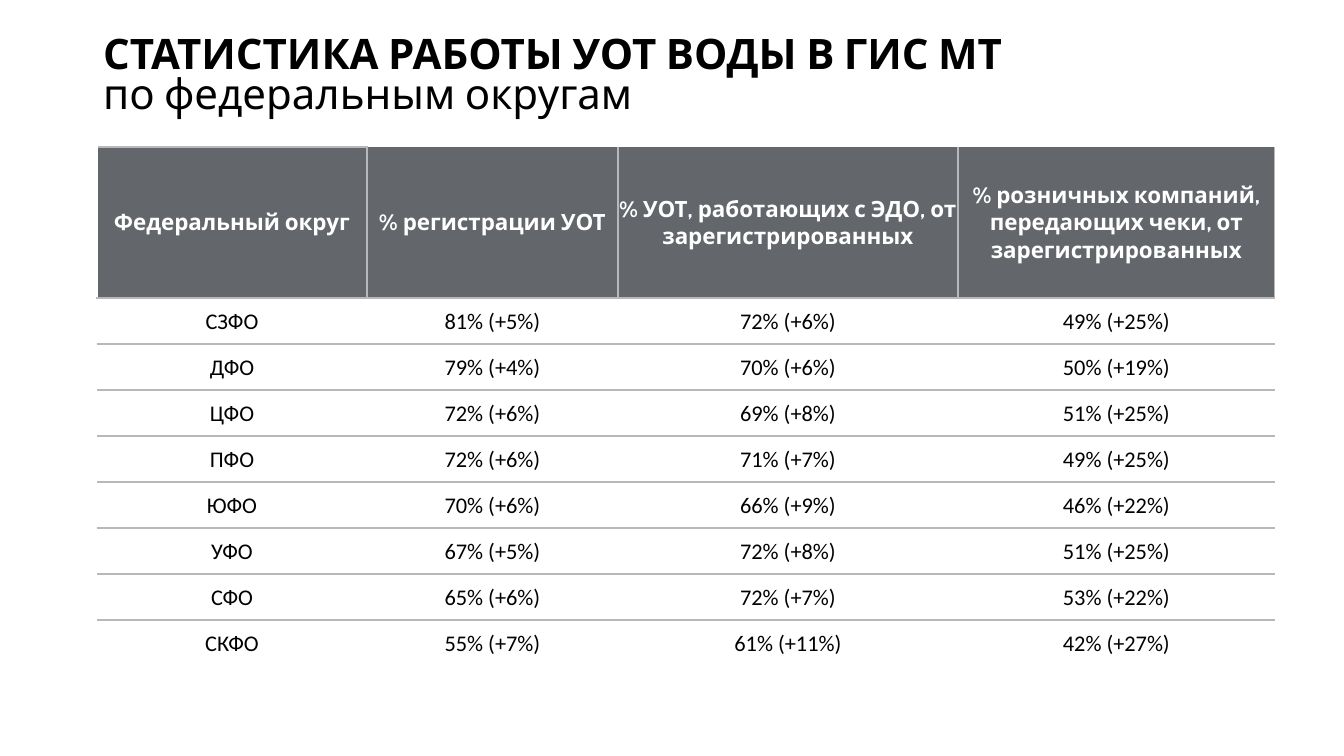
from lxml.etree import SubElement
from pptx import Presentation
from pptx.dml.color import RGBColor
from pptx.enum.text import MSO_ANCHOR as ANCHOR, MSO_AUTO_SIZE as AUTO, PP_ALIGN as ALIGN
from pptx.oxml.ns import qn
from pptx.util import Pt

PX = 914400 / 100.8
BLACK, WHITE, GREY, RULE = "000000", "FFFFFF", "63666A", "B6B8B9"

TITLE = [("СТАТИСТИКА РАБОТЫ УОТ ВОДЫ В ГИС МТ", True), ("по федеральным округам", False)]
HEADER = [
    "Федеральный округ",
    "% регистрации УОТ",
    "% УОТ, работающих с ЭДО, от зарегистрированных",
    "% розничных компаний, передающих чеки, от зарегистрированных",
]
DISTRICTS = [
    ("СЗФО", "81% (+5%)", "72% (+6%)", "49% (+25%)"),
    ("ДФО", "79% (+4%)", "70% (+6%)", "50% (+19%)"),
    ("ЦФО", "72% (+6%)", "69% (+8%)", "51% (+25%)"),
    ("ПФО", "72% (+6%)", "71% (+7%)", "49% (+25%)"),
    ("ЮФО", "70% (+6%)", "66% (+9%)", "46% (+22%)"),
    ("УФО", "67% (+5%)", "72% (+8%)", "51% (+25%)"),
    ("СФО", "65% (+6%)", "72% (+7%)", "53% (+22%)"),
    ("СКФО", "55% (+7%)", "61% (+11%)", "42% (+27%)"),
]
COLS = [270, 251, 340, 317]
ROWS = [151] + [46] * len(DISTRICTS)


def px(n):
    return round(n * PX)


def rgb(color):
    return RGBColor.from_string(color)


class Deck:
    """Holds the text style and the current slide."""
    head_font, body_font = "Cabin", "Calibri"
    title_size, cell_size = 30, 16

    def __init__(self, prs):
        self.slide = prs.slides.add_slide(prs.slide_layouts[5])

    def run(self, p, text, font, size, color, bold):
        r = p.add_run()
        r.text = text
        r.font.name, r.font.size, r.font.bold = font, Pt(size), bold
        r.font.color.rgb = rgb(color)

    def title(self, x, y, w, h, lines):
        sp = self.slide.shapes.title
        sp.left, sp.top, sp.width, sp.height = map(px, (x, y, w, h))
        tf = sp.text_frame
        tf.word_wrap, tf.auto_size = True, AUTO.SHAPE_TO_FIT_TEXT
        tf.vertical_anchor = ANCHOR.TOP
        for i, (text, bold) in enumerate(lines):
            p = tf.add_paragraph() if i else tf.paragraphs[0]
            p.alignment, p.line_spacing = ALIGN.LEFT, 0.8
            p.space_before = p.space_after = Pt(0)
            self.run(p, text, self.head_font, self.title_size, BLACK, bold)

    def borders(self, cell, **colors):
        """Draw the sides named L, R, T, B and clear the others."""
        tc_pr = cell._tc.get_or_add_tcPr()
        for side in "LRTB":
            ln = SubElement(tc_pr, qn(f"a:ln{side}"), w=str(Pt(1)))
            if side in colors:
                fill = SubElement(ln, qn("a:solidFill"))
                SubElement(fill, qn("a:srgbClr"), val=colors[side])
            else:
                SubElement(ln, qn("a:noFill"))

    def fill(self, cell, color, opacity=100):
        cell.fill.solid()
        cell.fill.fore_color.rgb = rgb(color)
        if opacity < 100:
            clr = cell._tc.tcPr.find(qn("a:solidFill")).find(qn("a:srgbClr"))
            SubElement(clr, qn("a:alpha"), val=str(opacity * 1000))

    def cell_text(self, cell, text, font, color, bold):
        cell.vertical_anchor = ANCHOR.MIDDLE
        cell.margin_left = cell.margin_right = cell.margin_top = px(1)
        cell.margin_bottom = 0
        p = cell.text_frame.paragraphs[0]
        p.alignment = ALIGN.CENTER
        self.run(p, text, font, self.cell_size, color, bold)

    def header_cell(self, cell, text, first):
        sides = {"L": WHITE, "T": RULE} if first else {"L": RULE}
        self.borders(cell, R=RULE, B=RULE, **sides)
        self.fill(cell, GREY)
        self.cell_text(cell, text, self.head_font, WHITE, True)

    def body_cell(self, cell, text, last):
        sides = {} if last else {"B": RULE}
        self.borders(cell, T=RULE, **sides)
        self.fill(cell, WHITE, 80)
        self.cell_text(cell, text, self.body_font, BLACK, False)

    def table(self, x, y, cols, rows, header, body):
        frame = self.slide.shapes.add_table(
            len(rows), len(cols), px(x), px(y), px(sum(cols)), px(sum(rows)))
        tbl = frame.table
        tbl.horz_banding = False
        for col, w in zip(tbl.columns, cols):
            col.width = px(w)
        for row, h in zip(tbl.rows, rows):
            row.height = px(h)
        for j, text in enumerate(header):
            self.header_cell(tbl.cell(0, j), text, j == 0)
        for i, values in enumerate(body, 1):
            for j, text in enumerate(values):
                self.body_cell(tbl.cell(i, j), text, i == len(body))


def main():
    prs = Presentation()
    prs.slide_width, prs.slide_height = px(1344), px(756)
    deck = Deck(prs)
    deck.title(93, 32, 1187, 93, TITLE)
    deck.table(97, 147, COLS, ROWS, HEADER, DISTRICTS)
    prs.save("out.pptx")


if __name__ == "__main__":
    main()
